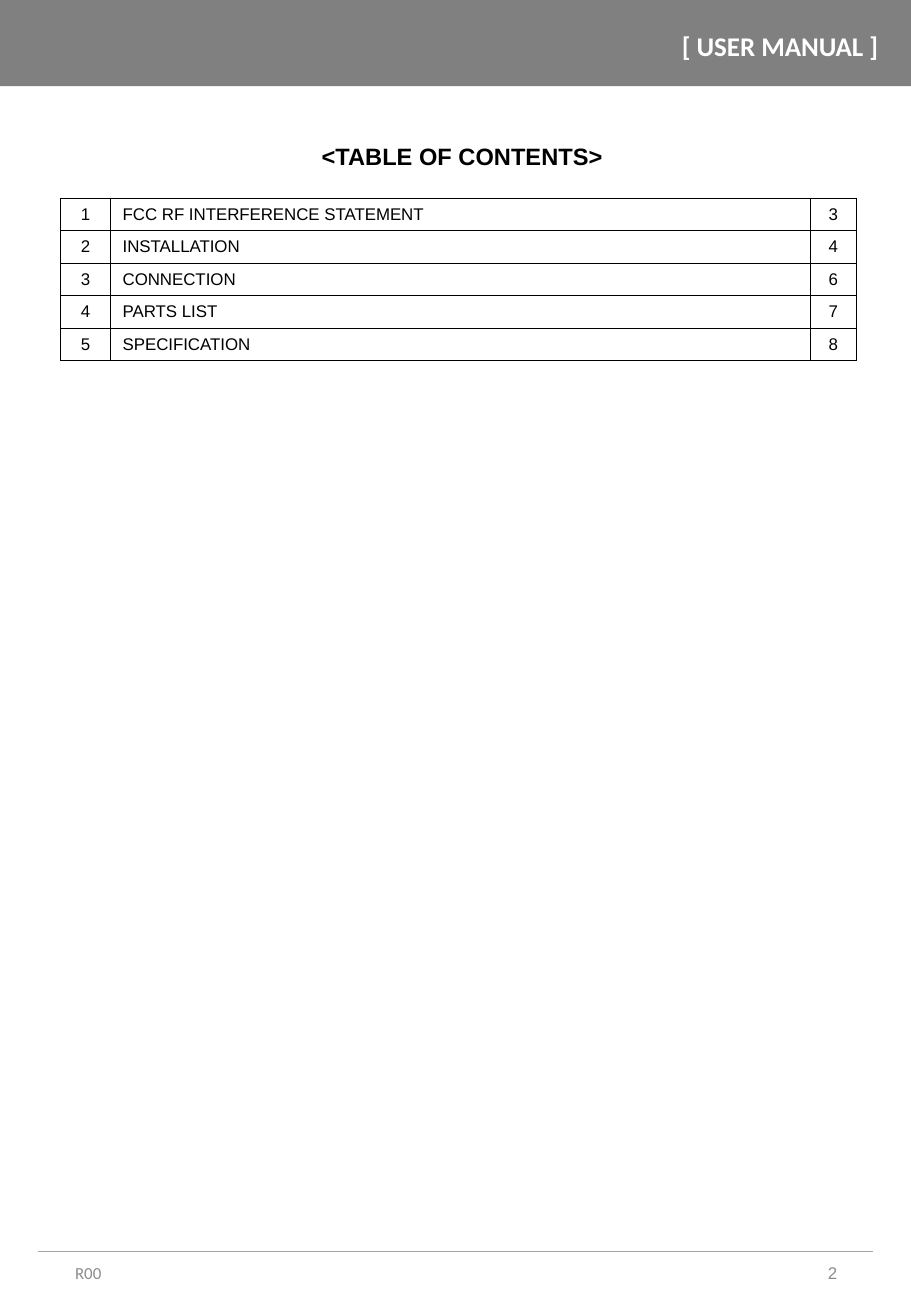
from dataclasses import dataclass

from lxml.etree import SubElement
from pptx import Presentation
from pptx.dml.color import RGBColor
from pptx.enum.shapes import MSO_CONNECTOR, MSO_SHAPE
from pptx.enum.text import MSO_ANCHOR, PP_ALIGN
from pptx.oxml import parse_xml
from pptx.oxml.ns import nsdecls, qn
from pptx.util import Inches, Pt


@dataclass(frozen=True)
class Theme:
    """Colours, fonts and sizes of the manual."""
    band: str = "808080"
    rule: str = "A5A5A5"
    muted: str = "8C8C8C"
    light: str = "FFFFFF"
    dark: str = "000000"
    body_font: str = "Arial"
    label_font: str = "Calibri"
    header_size: int = 16
    title_size: int = 14
    body_size: int = 10
    line_width: float = 0.5


THEME = Theme()
CONTENTS = [
    ("FCC RF INTERFERENCE STATEMENT", 3),
    ("INSTALLATION", 4),
    ("CONNECTION", 6),
    ("PARTS LIST", 7),
    ("SPECIFICATION", 8),
]


def write_text(text_frame, text, font, size, color, align=PP_ALIGN.LEFT, bold=False):
    """Put one formatted paragraph in a text frame and return it."""
    text_frame.text = text
    paragraph = text_frame.paragraphs[0]
    paragraph.alignment = align
    for run in paragraph.runs:
        run.font.name = font
        run.font.size = Pt(size)
        run.font.bold = bold
        run.font.color.rgb = RGBColor.from_string(color)
    return paragraph


def add_label(slide, left, top, width, height, text, font, size, color,
              align=PP_ALIGN.LEFT, bold=False, anchor=MSO_ANCHOR.TOP):
    """Add a wrapping text box and return its paragraph."""
    text_box = slide.shapes.add_textbox(
        Inches(left), Inches(top), Inches(width), Inches(height))
    text_box.text_frame.word_wrap = True
    text_box.text_frame.vertical_anchor = anchor
    return write_text(text_box.text_frame, text, font, size, color, align, bold)


def add_header(slide, left, top, width, height):
    """Draw the grey band with the manual's name at its right."""
    band = slide.shapes.add_shape(
        MSO_SHAPE.RECTANGLE, Inches(left), Inches(top), Inches(width), Inches(height))
    band.shadow.inherit = False
    band.fill.solid()
    band.fill.fore_color.rgb = RGBColor.from_string(THEME.band)
    band.line.fill.background()
    add_label(slide, left + width - 3.1, top + 0.19, 2.98, 0.37, "[ USER MANUAL ] ",
              THEME.label_font, THEME.header_size, THEME.light, PP_ALIGN.RIGHT, True)


def add_footer(slide, left, top, width):
    """Draw the rule with the revision and the page number below it."""
    rule = slide.shapes.add_connector(
        MSO_CONNECTOR.STRAIGHT, Inches(left), Inches(top), Inches(left + width), Inches(top))
    rule.line.color.rgb = RGBColor.from_string(THEME.rule)
    rule.line.width = Pt(THEME.line_width)
    SubElement(rule.line._get_or_add_ln().getparent(), qn("a:effectLst"))
    label_width, inset = 1.69, 0.2
    for label_left, text, font, align in (
        (left + inset + 0.01, "R00", THEME.label_font, PP_ALIGN.LEFT),
        (left + width - inset - label_width, "2", THEME.body_font, PP_ALIGN.RIGHT),
    ):
        add_label(slide, label_left, top - 0.12, label_width, 0.58, text, font,
                  THEME.body_size, THEME.muted, align, anchor=MSO_ANCHOR.MIDDLE)


def add_borders(cell):
    """Outline a table cell with thin lines."""
    properties = cell._tc.get_or_add_tcPr()
    for position, side in enumerate(("lnL", "lnR", "lnT", "lnB")):
        properties.insert(position, parse_xml(
            f'<a:{side} {nsdecls("a")} w="{Pt(THEME.line_width)}"><a:solidFill>'
            f'<a:srgbClr val="{THEME.dark}"/></a:solidFill></a:{side}>'))


def add_contents(slide, left, top, width, height):
    """Add the table of chapters and their pages."""
    shape = slide.shapes.add_table(
        len(CONTENTS), 3, Inches(left), Inches(top), Inches(width), Inches(height))
    table = shape.table
    table.first_row = table.horz_banding = False
    number_width, page_width = 0.41, 0.38
    widths = (number_width, width - number_width - page_width, page_width)
    for column, column_width in zip(table.columns, widths):
        column.width = Inches(column_width)
    aligns = (PP_ALIGN.CENTER, PP_ALIGN.LEFT, PP_ALIGN.CENTER)
    for row, (number, (chapter, page)) in zip(table.rows, enumerate(CONTENTS, 1)):
        for cell, value, align in zip(row.cells, (number, chapter, page), aligns):
            write_text(cell.text_frame, str(value), THEME.body_font,
                       THEME.body_size, THEME.dark, align)
            cell.vertical_anchor = MSO_ANCHOR.MIDDLE
            cell.fill.background()
            add_borders(cell)


def main():
    """Build the contents page and save it."""
    presentation = Presentation()
    presentation.slide_width = Inches(7.5)
    presentation.slide_height = Inches(10.83)
    slide = presentation.slides.add_slide(presentation.slide_layouts[6])
    add_footer(slide, 0.31, 10.3, 6.88)
    add_header(slide, 0, 0, 7.5, 0.71)
    title = add_label(slide, 0.53, 1, 6.55, 0.45, "<TABLE OF CONTENTS>", THEME.body_font,
                      THEME.title_size, THEME.dark, PP_ALIGN.CENTER, True)
    title.line_spacing = 1.5
    add_contents(slide, 0.5, 1.63, 6.55, 1.34)
    presentation.save("out.pptx")


if __name__ == "__main__":
    main()
